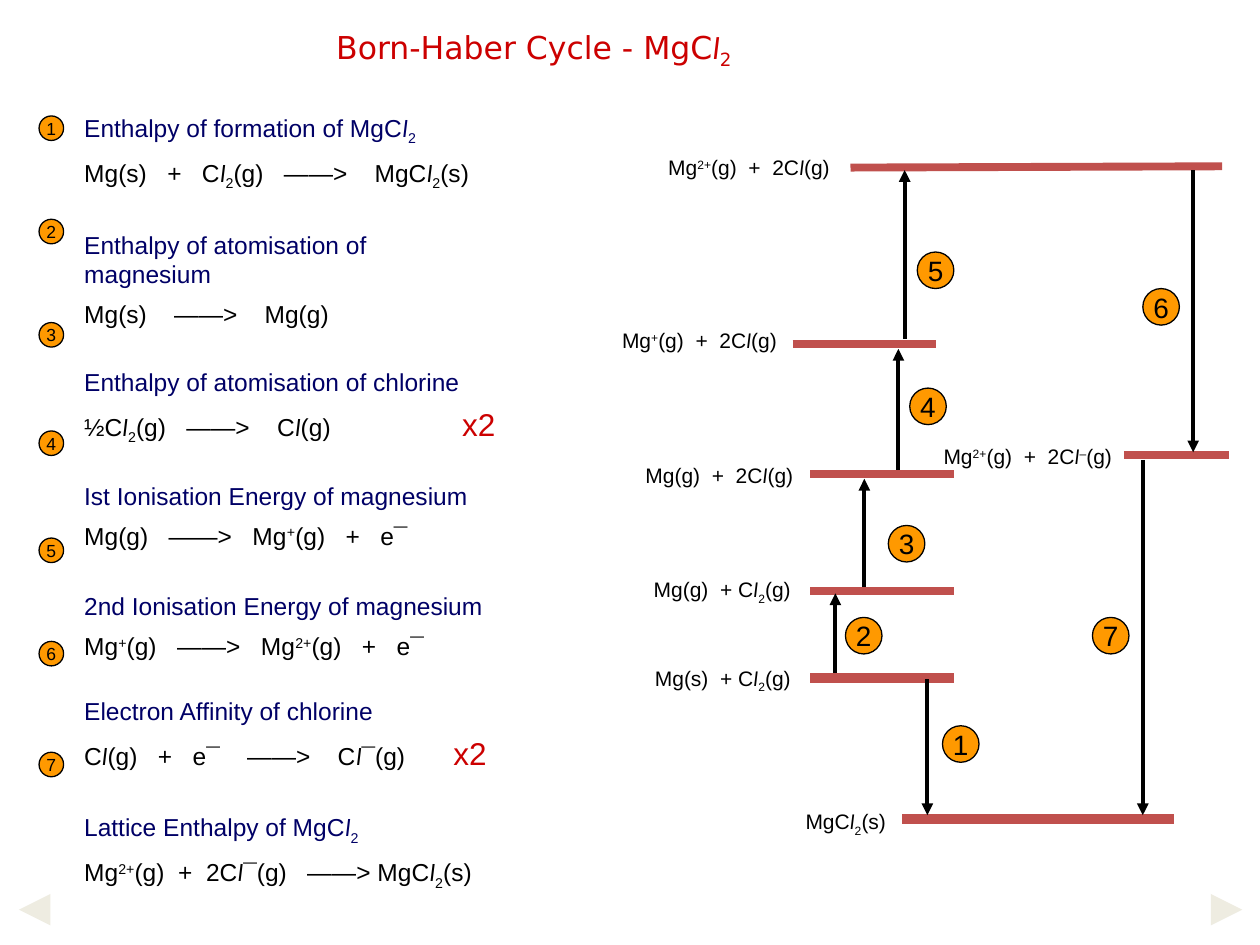
from lxml.etree import SubElement
from pptx import Presentation
from pptx.dml.color import RGBColor as RGB
from pptx.enum.shapes import MSO_CONNECTOR as CONN, MSO_SHAPE as SHAPE
from pptx.enum.text import MSO_ANCHOR as ANCHOR, PP_ALIGN as AL
from pptx.oxml.ns import qn
from pptx.util import Inches, Pt

C = {"black": "000000", "red": "CC0000", "navy": "000066",
     "orange": "FF9900", "level": "C0504D", "nav": "EEECE1"}

prs = Presentation()
prs.slide_width, prs.slide_height = Inches(10), Inches(7.5)
s = prs.slides.add_slide(prs.slide_layouts[6])
COL, ROW = prs.slide_width / 100, prs.slide_height / 75  # grid of 100 x 75


def write(p, text, size, color, font="Arial"):
    """Parts split by |: / italic l, _ subscript, ^ superscript, ! red factor."""
    for part in text.split("|"):
        mark = part[0] if part[0] in "/_^!" else ""
        r = p.add_run()
        r.text = part[len(mark):]
        f = r.font
        f.name = "Calibri" if mark == "/" else font
        f.size = Pt(18 if mark == "!" else size)
        f.color.rgb = RGB.from_string(C["red" if mark == "!" else color])
        if mark == "/":
            f.italic = True
        elif mark in ("_", "^"):
            r._r.get_or_add_rPr().set("baseline", "-25000" if mark == "_" else "30000")


def line(x1, y1, x2, y2, color, width, arrow=False):
    c = s.shapes.add_connector(CONN.STRAIGHT, int(x1 * COL), int(y1 * ROW),
                               int(x2 * COL), int(y2 * ROW))
    c.line.color.rgb = RGB.from_string(C[color])
    c.line.width = Pt(width)
    if arrow:
        SubElement(c.line._get_or_add_ln(), qn("a:tailEnd"), type="triangle")
    SubElement(c._element.spPr, qn("a:effectLst"))


# Energy levels: x1, y1, x2, y2, width
for x1, y1, x2, y2, width in [
    (67.5, 13.3, 97, 13.2, 4.5), (62.9, 27.3, 74.3, 27.3, 4.5),
    (64.3, 37.6, 75.7, 37.6, 4.5), (89.2, 36.1, 97.5, 36.1, 4.5),
    (64.3, 46.9, 75.7, 46.9, 4.5), (64.3, 53.8, 75.7, 53.8, 6),
    (71.6, 65, 93.2, 65, 6),
]:
    line(x1, y1, x2, y2, "level", width)

# Enthalpy changes: x, from y, to y
for x, y1, y2 in [(73.6, 53.9, 64.7), (66.3, 53.4, 47.1), (68.6, 46.6, 38),
                  (71.3, 37.3, 27.7), (71.8, 26.9, 13.5), (94.7, 13.5, 35.9),
                  (90.7, 36.5, 64.7)]:
    line(x, y1, x, y2, "black", 2.25, arrow=True)

# Numbered discs, on the diagram and beside the list
diagram = [(74.8, 57.6), (67.1, 49), (70.5, 41.7), (72.2, 30.8),
           (72.8, 20), (90.7, 22.9), (86.7, 49)]
margin = [(3.1, y) for y in (9.2, 17.4, 25.6, 34.2, 42.7, 50.9, 59.7)]
for places, side, size in [(diagram, 2.9, 16), (margin, 1.95, 10)]:
    for number, (x, y) in enumerate(places, 1):
        sp = s.shapes.add_shape(SHAPE.OVAL, int(x * COL), int(y * ROW),
                                int(side * COL), int(side * ROW))
        sp.shadow.inherit = False
        sp.fill.solid()
        sp.fill.fore_color.rgb = RGB.from_string(C["orange"])
        sp.line.color.rgb = RGB.from_string(C["black"])
        sp.line.width = Pt(0.75)
        tf = sp.text_frame
        tf.word_wrap = False
        tf.margin_left = tf.margin_right = tf.margin_top = tf.margin_bottom = 0
        tf.vertical_anchor = ANCHOR.MIDDLE
        tf.paragraphs[0].alignment = AL.CENTER
        write(tf.paragraphs[0], str(number), size, "black")

# Title and level labels: x, y, width, height, text, size, colour, font, alignment
label = (12, "black", "Arial", AL.RIGHT)
for x, y, w, h, text, size, color, font, align in [
    (25.7, 1.7, 49, 5, "Born-Haber Cycle - MgC|/l|_2", 18, "red", "DejaVu Sans", AL.LEFT),
    (50.5, 11.8, 16.8, 3, "Mg|^2+|(g)  +  2C|/l|(g) ", *label),
    (47.7, 25.5, 15.4, 3, "Mg|^+|(g)  +  2C|/l|(g) ", *label),
    (47.7, 36.2, 16.7, 3, "Mg(g)  +  2C|/l|(g) ", *label),
    (73.4, 34.7, 16.3, 3, "Mg|^2+|(g)  +  2C|/l|^–|(g) ", *label),
    (50.3, 45.3, 13.9, 3, "Mg(g)  + C|/l|_2|(g) ", *label),
    (50.3, 52.3, 13.9, 3, "Mg(s)  + C|/l|_2|(g) ", *label),
    (60.8, 63.7, 10.5, 3, "MgC|/l|_2|(s)", *label),
]:
    tf = s.shapes.add_textbox(int(x * COL), int(y * ROW), int(w * COL), int(h * ROW)).text_frame
    tf.word_wrap = True
    tf.paragraphs[0].alignment = align
    write(tf.paragraphs[0], text, size, color, font)

# Steps: gap above (pt), heading, equation, line spacing, tab column
steps = [
    (0, "Enthalpy of formation of MgC|/l|_2",
     "Mg(s)   +   C|/l|_2|(g)   ——>    MgC|/l|_2|(s)", 1.2, None),
    (18.9, "Enthalpy of atomisation of magnesium", "Mg(s)    ——>    Mg(g)", 1.2, None),
    (18.9, "Enthalpy of atomisation of chlorine",
     "½C|/l|_2|(g)   ——>    C|/l|(g)\t|!x2", 1.1, 30),
    (17.3, "Ist Ionisation Energy of magnesium",
     "Mg(g)   ——>   Mg|^+|(g)   +   e¯", 1.2, None),
    (20.5, "2nd Ionisation Energy of magnesium",
     "Mg|^+|(g)   ——>   Mg|^2+|(g)   +   e¯", 1.2, None),
    (17.3, "Electron Affinity of chlorine",
     "C|/l|(g)   +   e¯    ——>    C|/l|¯(g)\t|!x2", 1.1, 29.3),
    (20.5, "Lattice Enthalpy of MgC|/l|_2",
     "Mg|^2+|(g)  +  2C|/l|¯(g)   ——> MgC|/l|_2|(s)", 1.2, None),
]
tf = s.shapes.add_textbox(int(5.7 * COL), int(8.5 * ROW),
                          int(34.7 * COL), int(61 * ROW)).text_frame
tf.word_wrap = True
for i, (gap, heading, equation, spacing, tab) in enumerate(steps):
    p = tf.add_paragraph() if i else tf.paragraphs[0]
    p.space_before, p.space_after = Pt(gap), Pt(2.8)
    write(p, heading, 14, "navy")
    p = tf.add_paragraph()
    p.line_spacing, p.space_after = spacing, Pt(2.8)
    if tab:
        tabs = SubElement(p._p.get_or_add_pPr(), qn("a:tabLst"))
        SubElement(tabs, qn("a:tab"), pos=str(int(tab * COL)), algn="l")
    write(p, equation, 14, "black")

# Navigation arrows
for x1, x2 in [(96.5, 98.6), (3.6, 1.5)]:
    line(x1, 72.2, x2, 72.2, "nav", 6, arrow=True)

prs.save("out.pptx")
